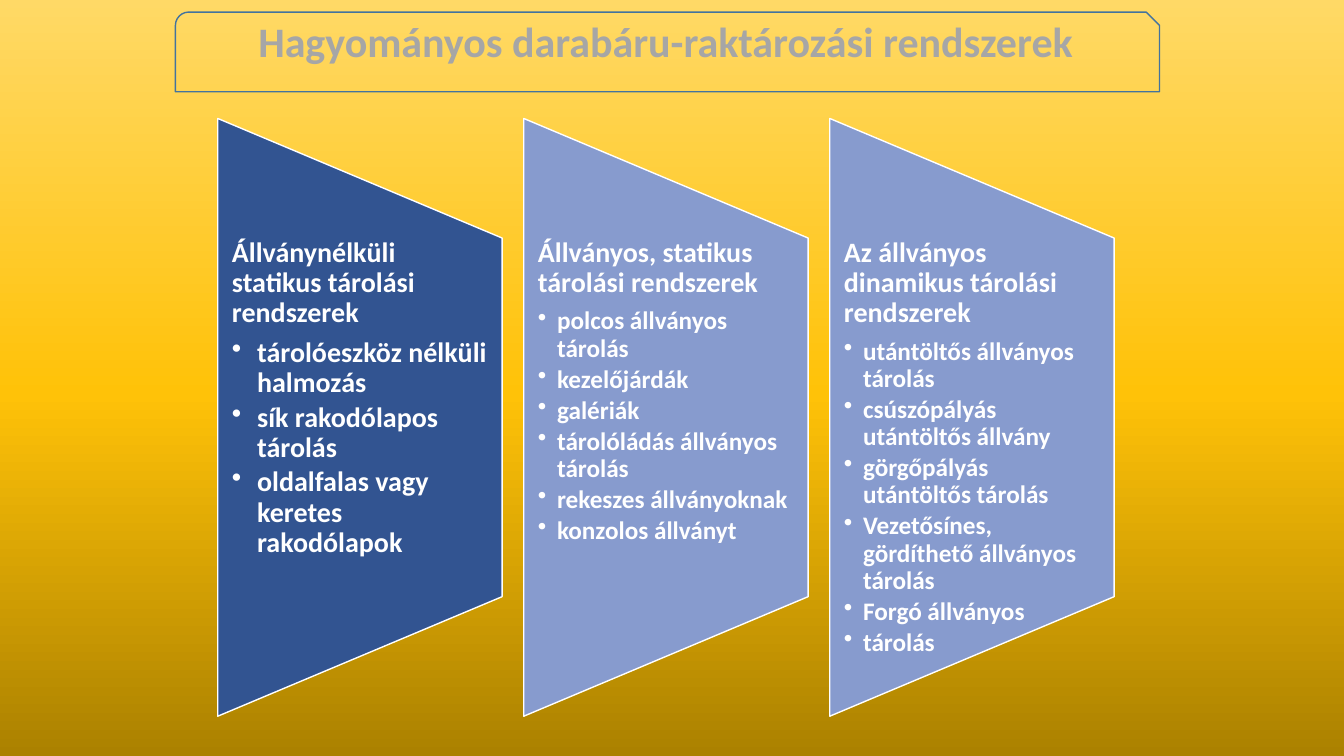
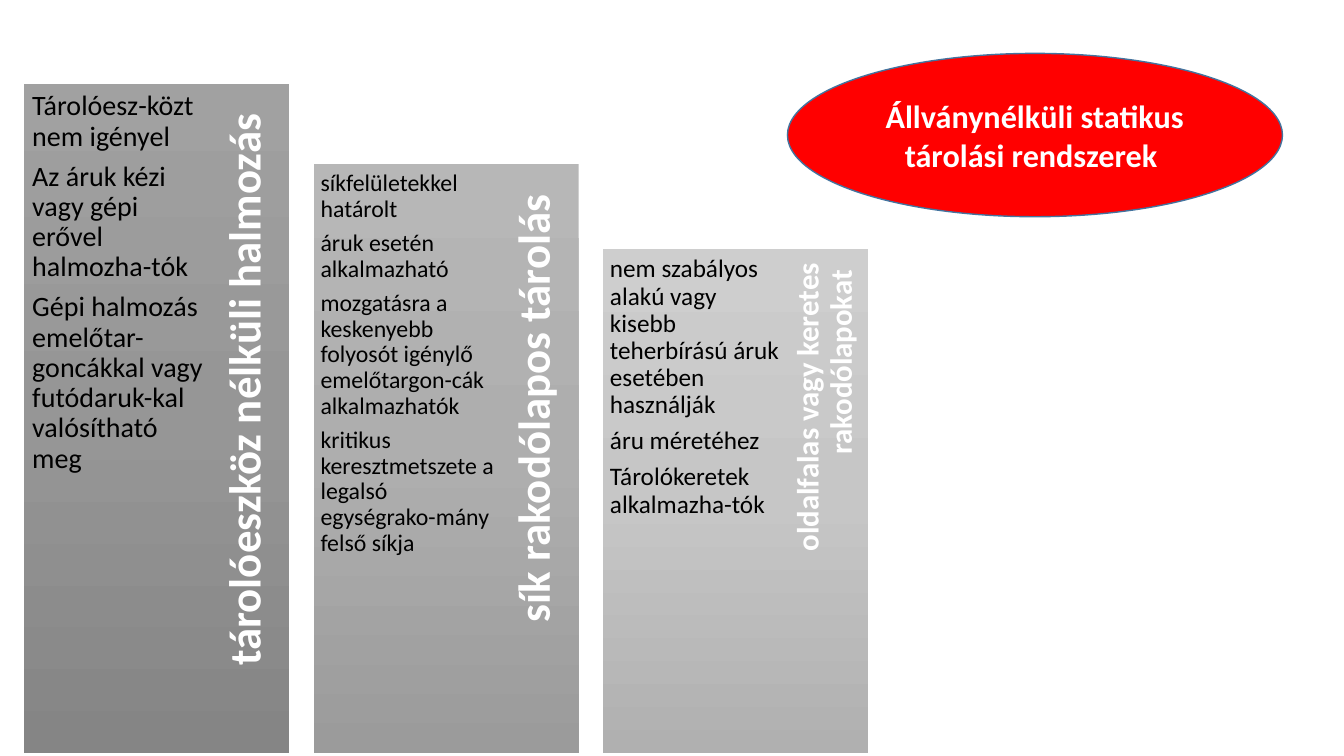
from dataclasses import dataclass

from lxml import etree
from pptx import Presentation
from pptx import util as u
from pptx.dml import color
from pptx.enum import shapes, text
from pptx.oxml import ns

FONT = "Calibri"
COLOURS = {
    "white": "FFFFFF",
    "black": "000000",
    "title": "A6A6A6",
    "outline": "43739E",
    "active": "325491",
    "panel": "879BCE",
    "red": "FF0000",
}
GOLD = [(0, "AB8100"), (48, "FFC208"), (100, "FFD966")]


@dataclass(frozen=True)
class Line:
    content: str
    size: float
    colour: str = "white"
    bold: bool = True
    align: text.PP_ALIGN = text.PP_ALIGN.LEFT
    spacing: float = 1.0
    after: float = 0.0
    hanging: float = 0.0


@dataclass(frozen=True)
class Panel:
    fill: str
    heading: str
    bullet_size: float
    indent: float
    bullets: list[str]


@dataclass(frozen=True)
class Column:
    top: float
    stops: list[tuple[int, str]]
    label: str
    label_size: float
    label_margins: tuple[float, float, float, float]
    body_size: float
    body_margin: float
    body: list[str]


PANELS = [
    Panel("active", "Állványnélküli statikus tárolási rendszerek", 20, 0.25, [
        "tárolóeszköz nélküli halmozás",
        "sík rakodólapos tárolás",
        "oldalfalas vagy keretes rakodólapok",
    ]),
    Panel("panel", "Állványos, statikus tárolási rendszerek", 18, 0.19, [
        "polcos állványos tárolás",
        "kezelőjárdák",
        "galériák",
        "tárolóládás állványos tárolás",
        "rekeszes állványoknak",
        "konzolos állványt",
    ]),
    Panel("panel", "Az állványos dinamikus tárolási rendszerek", 18, 0.19, [
        "utántöltős állványos tárolás",
        "csúszópályás utántöltős állvány",
        "görgőpályás utántöltős tárolás",
        "Vezetősínes, gördíthető állványos tárolás",
        "Forgó állványos",
        "tárolás",
    ]),
]

COLUMNS = [
    Column(0.83, [(0, "A1A1A1"), (50, "969696"), (100, "858585")],
           "tárolóeszköz nélküli halmozás ", 32, (0.13, 0, 0.2, 0.04), 20, 0.08, [
        "Tárolóesz-közt nem igényel",
        "Az áruk kézi vagy gépi erővel halmozha-tók",
        "Gépi halmozás emelőtar-goncákkal vagy futódaruk-kal valósítható meg",
    ]),
    Column(1.63, [(0, "B7B7B7"), (50, "AEAEAE"), (100, "9B9B9B")],
           "sík rakodólapos tárolás ", 32, (0.13, 0, 0.2, 0.04), 17, 0.07, [
        "síkfelületekkel határolt",
        "áruk esetén alkalmazható",
        "mozgatásra a keskenyebb folyosót igénylő emelőtargon-cák alkalmazhatók",
        "kritikus keresztmetszete a legalsó egységrako-mány felső síkja",
    ]),
    Column(2.47, [(0, "CECECE"), (50, "C6C6C6"), (100, "B0B0B0")],
           "oldalfalas vagy keretes rakodólapokat ", 22, (0.09, 0, 0.14, 0.03), 18, 0.07, [
        "nem szabályos alakú vagy kisebb teherbírású áruk esetében használják",
        "áru méretéhez",
        "Tárolókeretek alkalmazha-tók",
    ]),
]


def rgb(name: str) -> color.RGBColor:
    return color.RGBColor.from_string(COLOURS[name])


def apply_gradient(owner, fill, stops: list[tuple[int, str]], angle: float) -> None:
    fill.gradient()
    fill.gradient_angle = angle
    stop_list = next(owner.element.iter(ns.qn("a:gsLst")))
    for old_stop in list(stop_list):
        stop_list.remove(old_stop)
    for position, value in stops:
        stop = etree.SubElement(stop_list, ns.qn("a:gs"), pos=str(position * 1000))
        etree.SubElement(stop, ns.qn("a:srgbClr"), val=value)


def add_box(slide, kind, left: float, top: float, width: float, height: float,
            fill: str | None = None, outline: str | None = None):
    shape = slide.shapes.add_shape(
        kind, u.Inches(left), u.Inches(top), u.Inches(width), u.Inches(height))
    shape.shadow.inherit = False
    if fill:
        shape.fill.solid()
        shape.fill.fore_color.rgb = rgb(fill)
    else:
        shape.fill.background()
    if outline:
        shape.line.color.rgb = rgb(outline)
        shape.line.width = u.Pt(1)
    else:
        shape.line.fill.background()
    return shape


def write_lines(shape, lines: list[Line], anchor=text.MSO_ANCHOR.TOP,
                margins: tuple[float, float, float, float] = (0.1, 0.05, 0.1, 0.05)) -> None:
    frame = shape.text_frame
    frame.word_wrap = True
    frame.vertical_anchor = anchor
    (frame.margin_left, frame.margin_top,
     frame.margin_right, frame.margin_bottom) = map(u.Inches, margins)
    frame.text = "\n".join(line.content for line in lines)
    for paragraph, line in zip(frame.paragraphs, lines):
        paragraph.alignment = line.align
        paragraph.line_spacing = line.spacing
        paragraph.space_after = u.Pt(line.size * line.after)
        if line.hanging:
            paragraph.level = 1
            properties = paragraph._p.get_or_add_pPr()
            properties.set("marL", str(u.Inches(line.hanging)))
            properties.set("indent", str(-u.Inches(line.hanging)))
            etree.SubElement(properties, ns.qn("a:buChar"), char="•")
        for run in paragraph.runs:
            run.font.name = FONT
            run.font.size = u.Pt(line.size)
            run.font.bold = line.bold
            run.font.color.rgb = rgb(line.colour)


def add_text(slide, left: float, top: float, width: float, height: float,
             lines: list[Line], **options):
    box = slide.shapes.add_textbox(
        u.Inches(left), u.Inches(top), u.Inches(width), u.Inches(height))
    write_lines(box, lines, **options)
    return box


def draw_panel(slide, panel: Panel, left: float) -> None:
    width, length, middle, text_height = 2.82, 5.93, 4.14, 3.56
    shape = add_box(slide, shapes.MSO_SHAPE.FLOWCHART_MANUAL_OPERATION,
                    left + (width - length) / 2, middle - width / 2, length, width,
                    panel.fill, "white")
    shape.rotation = 270
    lines = [Line(panel.heading, 20, spacing=0.9, after=0.35)]
    lines += [Line(bullet, panel.bullet_size, spacing=0.9, after=0.15, hanging=panel.indent)
              for bullet in panel.bullets]
    add_text(slide, left, middle - text_height / 2, width, text_height, lines,
             margins=(0.14, 0, 0.14, 0))


def draw_column(slide, column: Column, left: float) -> None:
    height = 7.47 - column.top
    bar = add_box(slide, shapes.MSO_SHAPE.RECTANGLE, left, column.top, 2.63, height)
    apply_gradient(bar, bar.fill, column.stops, 270)
    label_length, label_height = height * 0.9, 0.68
    label = add_text(
        slide, left + 2.22 - label_length / 2, column.top + (label_length - label_height) / 2,
        label_length, label_height,
        [Line(column.label, column.label_size, align=text.PP_ALIGN.RIGHT,
              spacing=0.9, after=0.35)],
        anchor=text.MSO_ANCHOR.MIDDLE, margins=column.label_margins)
    label.rotation = 270
    lines = [Line(item, column.body_size, "black", False, spacing=0.9, after=0.35)
             for item in column.body]
    add_text(slide, left, column.top, 1.87, 7.5 - column.top, lines,
             margins=(column.body_margin,) * 4)


def build_overview(slide) -> None:
    apply_gradient(slide, slide.background.fill, GOLD, 90)
    for index, panel in enumerate(PANELS):
        draw_panel(slide, panel, 2.16 + index * 3.035)
    title = add_box(slide, shapes.MSO_SHAPE.SNIP_ROUND_RECTANGLE,
                    1.74, 0.12, 9.76, 0.79, outline="outline")
    write_lines(title, [Line("Hagyományos darabáru-raktározási rendszerek", 30, "title",
                             align=text.PP_ALIGN.CENTER)], margins=(0.1, 0, 0.1, 0))


def build_static_storage(slide) -> None:
    heading = add_box(slide, shapes.MSO_SHAPE.OVAL, 7.81, 0.53, 4.91, 1.62, "red", "outline")
    write_lines(heading, [Line("Állványnélküli statikus tárolási rendszerek ", 23,
                               align=text.PP_ALIGN.CENTER)], anchor=text.MSO_ANCHOR.MIDDLE)
    for index, column in reversed(list(enumerate(COLUMNS))):
        draw_column(slide, column, 0.24 + index * 2.87)


def main() -> None:
    presentation = Presentation()
    presentation.slide_width = u.Inches(13.33)
    presentation.slide_height = u.Inches(7.5)
    for build in (build_overview, build_static_storage):
        build(presentation.slides.add_slide(presentation.slide_layouts[6]))
    presentation.save("out.pptx")


if __name__ == "__main__":
    main()
